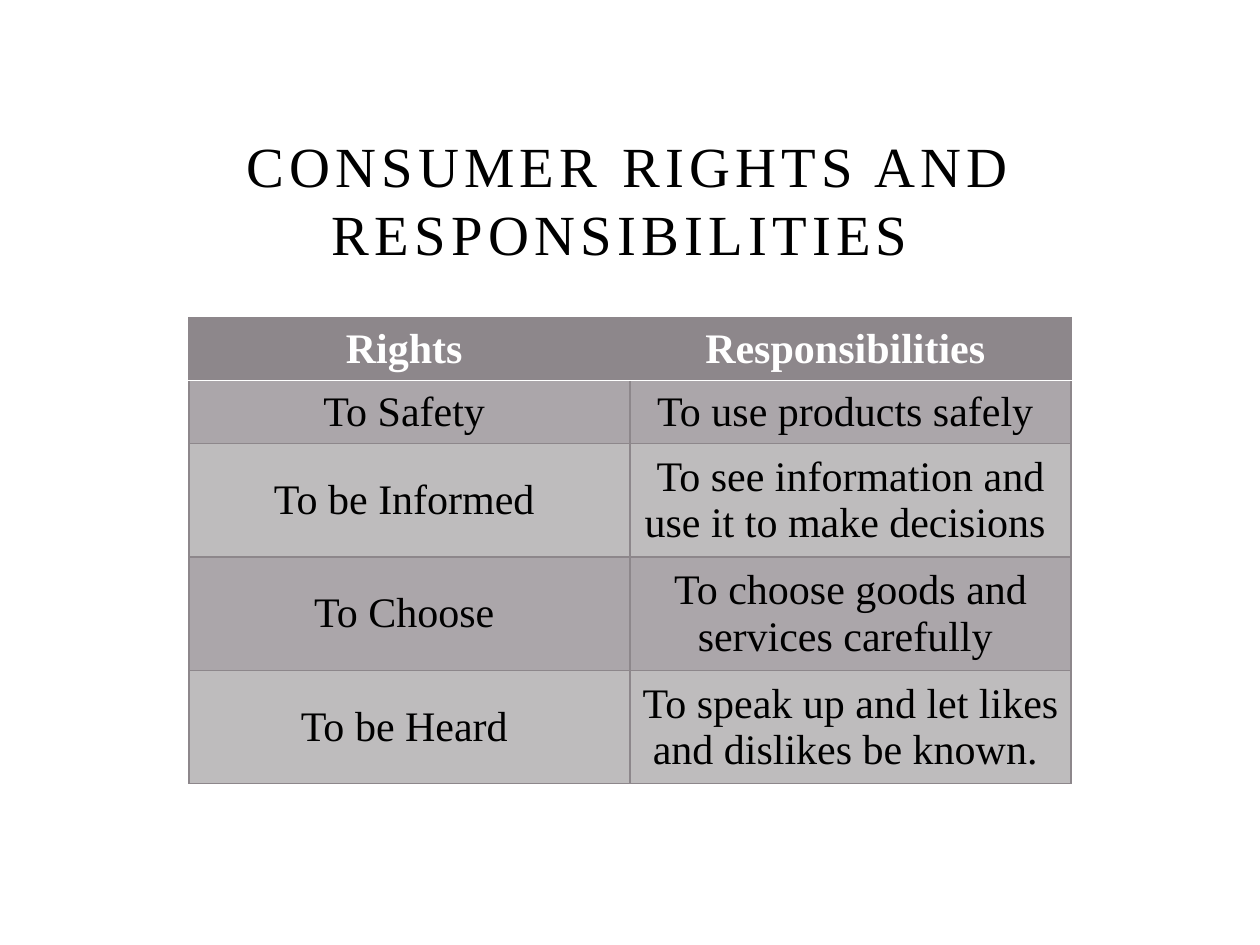
from lxml.etree import SubElement
from pptx import Presentation
from pptx.dml.color import RGBColor
from pptx.enum.text import MSO_ANCHOR, PP_ALIGN
from pptx.oxml.ns import qn
from pptx.util import Cm, Pt

TITLE = "CONSUMER RIGHTS AND RESPONSIBILITIES "
ROWS = [
    ("Rights ", "Responsibilities "),
    ("To Safety ", "To use products safely "),
    ("To be Informed ", "To see information and use it to make decisions "),
    ("To Choose ", "To choose goods and services carefully "),
    ("To be Heard ", "To speak up and let likes and dislikes be known. "),
]
FONT = "Times New Roman"
BLACK, WHITE, MAUVE = "000000", "FFFFFF", "8D878B"
BANDS = ["BEBCBD", "ABA6AA"]
LEFT, WIDTH = 3.81, 17.78
ROW_HEIGHT = 1.04


def color(value):
    return RGBColor.from_string(value)


def style_text(paragraph, size, ink, bold=False):
    paragraph.alignment = PP_ALIGN.CENTER
    for run in paragraph.runs:
        run.font.name = FONT
        run.font.size = Pt(size)
        run.font.bold = bold
        run.font.color.rgb = color(ink)


def add_border(cell, side, ink, width):
    border = SubElement(cell._tc.get_or_add_tcPr(), qn(f"a:ln{side}"), w=str(Pt(width)))
    fill = SubElement(border, qn("a:solidFill"))
    SubElement(fill, qn("a:srgbClr"), val=ink)


def add_title(slide):
    title = slide.shapes.add_textbox(Cm(LEFT), Cm(3.61), Cm(WIDTH), Cm(1.9))
    frame = title.text_frame
    frame.word_wrap = True
    frame.vertical_anchor = MSO_ANCHOR.BOTTOM
    frame.text = TITLE
    heading = frame.paragraphs[0]
    style_text(heading, 32.4, BLACK)
    heading.runs[0].font._element.set("spc", "300")


def style_cell(cell, row, text):
    header = row == 0
    cell.text = text
    cell.vertical_anchor = MSO_ANCHOR.MIDDLE
    style_text(cell.text_frame.paragraphs[0], 24, WHITE if header else BLACK, header)
    divider = {0: "B", 1: "T"}.get(row)
    for side in "LRTB":
        if side == divider:
            add_border(cell, side, WHITE, 0.85)
        else:
            add_border(cell, side, MAUVE, 0.75)
    cell.fill.solid()
    cell.fill.fore_color.rgb = color(MAUVE if header else BANDS[row % 2])


def add_rights_table(slide):
    rights = slide.shapes.add_table(
        len(ROWS), len(ROWS[0]), Cm(LEFT), Cm(6.4), Cm(WIDTH), Cm(ROW_HEIGHT * len(ROWS))
    ).table
    rights.horz_banding = False
    for row, texts in enumerate(ROWS):
        for column, text in enumerate(texts):
            style_cell(rights.cell(row, column), row, text)


def main():
    """Build the consumer rights and responsibilities slide."""
    deck = Presentation()
    deck.slide_width, deck.slide_height = Cm(25.4), Cm(19.05)
    slide = deck.slides.add_slide(deck.slide_layouts[6])
    add_title(slide)
    add_rights_table(slide)
    deck.save("out.pptx")


if __name__ == "__main__":
    main()
